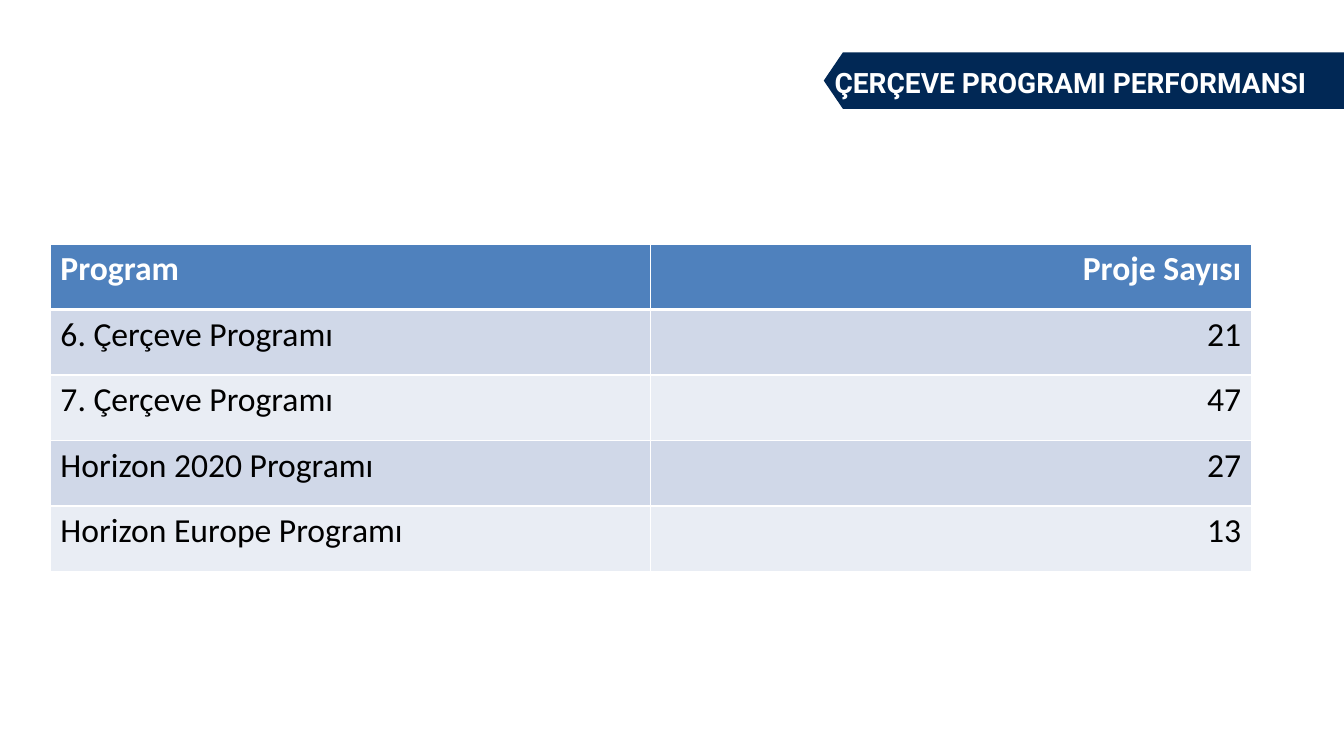
from dataclasses import dataclass

import pptx
import pptx.dml.color
import pptx.enum.text
import pptx.oxml
import pptx.oxml.ns
import pptx.util
from pptx.enum.text import PP_ALIGN

PX = 9144  # EMU per px, 100 px to the inch


@dataclass(frozen=True)
class Theme:
    navy: str = "012855"
    white: str = "FFFFFF"
    black: str = "000000"
    header: str = "4F81BD"
    bands: tuple[str, str] = ("D0D8E8", "E9EDF4")
    title_font: str = "Roboto"
    table_font: str = "Calibri"
    title_size: int = 20
    table_size: int = 24
    thin_rule: int = 1
    header_rule: int = 3


@dataclass(frozen=True)
class Box:
    left: int
    top: int
    width: int
    height: int

    def emu(self) -> tuple[int, int, int, int]:
        return self.left * PX, self.top * PX, self.width * PX, self.height * PX


@dataclass(frozen=True)
class ProgramRow:
    program: str
    projects: str


THEME = Theme()
BANNER = Box(817, 52, 539, 56)
BANNER_NOTCH = 19
TITLE = Box(818, 60, 544, 44)
TABLE = Box(50, 242, 1191, 325)
ROWS = (
    ProgramRow("Program", "Proje Sayısı"),
    ProgramRow("6. Çerçeve Programı", "21"),
    ProgramRow("7. Çerçeve Programı", "47"),
    ProgramRow("Horizon 2020 Programı", "27"),
    ProgramRow("Horizon Europe Programı", "13"),
)


def rgb(value: str) -> pptx.dml.color.RGBColor:
    return pptx.dml.color.RGBColor.from_string(value)


def write(frame, text: str, *, font: str, size: int, color: str,
          bold: bool = False, align: PP_ALIGN = PP_ALIGN.LEFT) -> None:
    para = frame.paragraphs[0]
    para.alignment = align
    span = para.add_run()
    span.text = text
    span.font.name = font
    span.font.size = pptx.util.Pt(size)
    span.font.bold = bold
    span.font.color.rgb = rgb(color)


def draw_banner(page, box: Box) -> None:
    """Draw a bar whose left end is a point."""
    right, bottom = box.left + box.width, box.top + box.height
    shoulder = box.left + BANNER_NOTCH
    outline = page.shapes.build_freeform(shoulder, box.top, scale=PX)
    outline.add_line_segments([
        (right, box.top), (right, bottom), (shoulder, bottom),
        (box.left, box.top + box.height // 2),
    ], close=True)
    banner = outline.convert_to_shape()
    banner.shadow.inherit = False
    banner.fill.solid()
    banner.fill.fore_color.rgb = rgb(THEME.navy)
    banner.line.fill.background()


def draw_title(page, box: Box) -> None:
    frame = page.shapes.add_textbox(*box.emu()).text_frame
    frame.word_wrap = True
    frame.auto_size = pptx.enum.text.MSO_AUTO_SIZE.SHAPE_TO_FIT_TEXT
    write(frame, "ÇERÇEVE PROGRAMI PERFORMANSI", font=THEME.title_font,
          size=THEME.title_size, color=THEME.white, bold=True)


def set_borders(cell, top: int, bottom: int) -> None:
    """Rule all four sides in white; widths are in points."""
    sides = {"L": THEME.thin_rule, "R": THEME.thin_rule, "T": top, "B": bottom}
    properties = cell._tc.get_or_add_tcPr()
    for side, width in sides.items():
        properties.append(pptx.oxml.parse_xml(
            f'<a:ln{side} {pptx.oxml.ns.nsdecls("a")} w="{pptx.util.Pt(width)}">'
            f'<a:solidFill><a:srgbClr val="{THEME.white}"/></a:solidFill>'
            f'</a:ln{side}>'))


def draw_table(page, box: Box, rows: tuple[ProgramRow, ...]) -> None:
    table = page.shapes.add_table(len(rows), 2, *box.emu()).table
    for index, row in enumerate(rows):
        is_header = index == 0
        fill = THEME.header if is_header else THEME.bands[(index - 1) % 2]
        top = THEME.header_rule if index == 1 else THEME.thin_rule
        bottom = THEME.header_rule if is_header else THEME.thin_rule
        columns = ((row.program, PP_ALIGN.LEFT), (row.projects, PP_ALIGN.RIGHT))
        for column, (text, align) in enumerate(columns):
            cell = table.cell(index, column)
            set_borders(cell, top, bottom)
            cell.fill.solid()
            cell.fill.fore_color.rgb = rgb(fill)
            write(cell.text_frame, text, font=THEME.table_font,
                  size=THEME.table_size, bold=is_header, align=align,
                  color=THEME.white if is_header else THEME.black)


def main() -> None:
    deck = pptx.Presentation()
    deck.slide_width, deck.slide_height = 1333 * PX, 750 * PX
    page = deck.slides.add_slide(deck.slide_layouts[6])
    draw_banner(page, BANNER)
    draw_title(page, TITLE)
    draw_table(page, TABLE, ROWS)
    deck.save("out.pptx")


if __name__ == "__main__":
    main()
